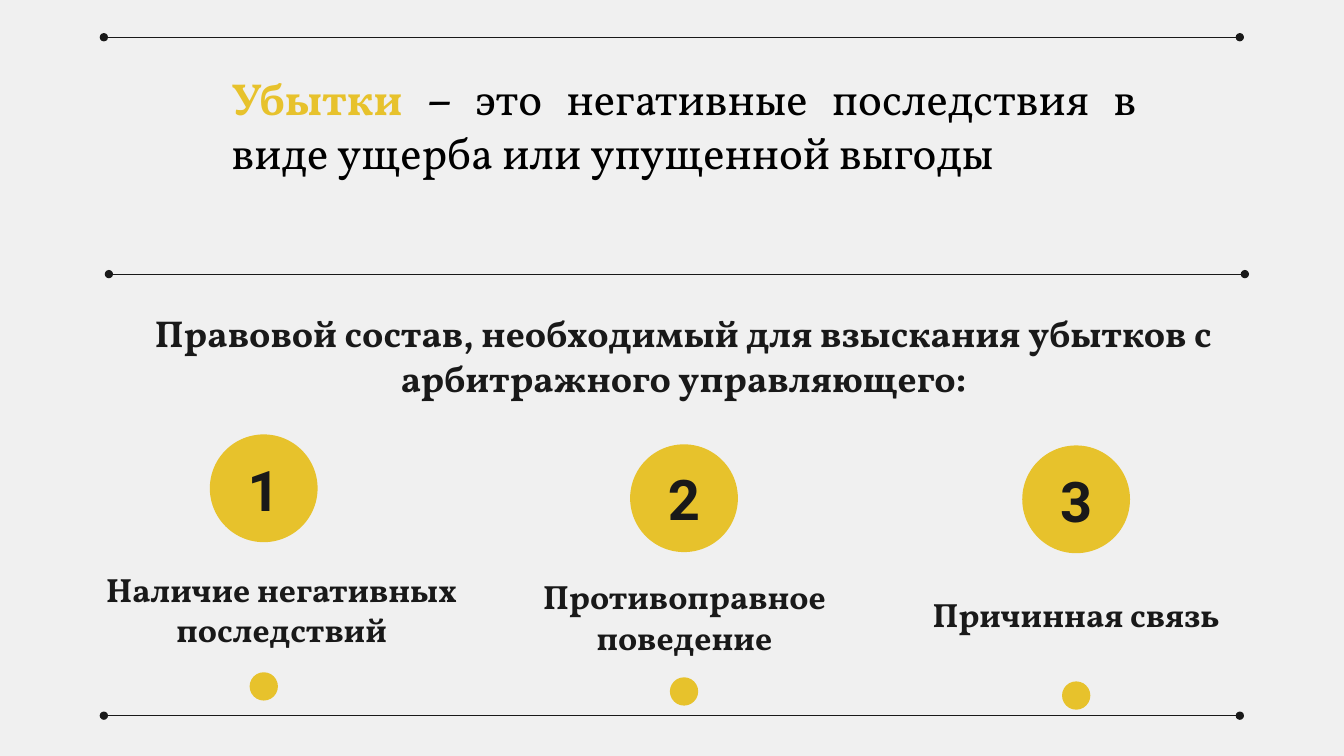
from pptx import Presentation
from pptx.dml.color import RGBColor
from pptx.enum.shapes import MSO_CONNECTOR, MSO_SHAPE
from pptx.enum.text import MSO_ANCHOR, PP_ALIGN
from pptx.oxml.ns import qn
from pptx.util import Pt
from lxml.etree import SubElement

GOLD, INK, BLACK, PAPER = "E7C22C", "191919", "000000", "F0F0F0"
SERIF, SANS = "Vollkorn", "Roboto"


def paint(color, code):
    color.rgb = RGBColor.from_string(code)


def write(left, top, width, height, runs, size, font=SERIF,
          anchor=MSO_ANCHOR.TOP, align=PP_ALIGN.CENTER, inset=9.6):
    """Add a text box; runs holds (text, colour, bold) triples."""
    box = slide.shapes.add_textbox(Pt(left), Pt(top), Pt(width), Pt(height))
    frame = box.text_frame
    frame.word_wrap = True
    frame.vertical_anchor = anchor
    if inset:
        frame.margin_left = frame.margin_right = Pt(inset)
        frame.margin_top = frame.margin_bottom = Pt(inset)
    para = frame.paragraphs[0]
    para.alignment = align
    for text, code, bold in runs:
        run = para.add_run()
        run.text = text
        run.font.name = font
        run.font.size = Pt(size)
        run.font.bold = bold
        paint(run.font.color, code)


deck = Presentation()
deck.slide_width, deck.slide_height = Pt(960), Pt(540)
slide = deck.slides.add_slide(deck.slide_layouts[6])
slide.background.fill.solid()
paint(slide.background.fill.fore_color, PAPER)

# Rules with round ends
for left, top in [(74.2, 26.6), (77.8, 195.8), (74.2, 511.2)]:
    rule = slide.shapes.add_connector(
        MSO_CONNECTOR.STRAIGHT, Pt(left), Pt(top), Pt(left + 811.4), Pt(top))
    rule.line.width = Pt(0.75)
    paint(rule.line.color, INK)
    stroke = rule.line._get_or_add_ln()
    for end in ("a:headEnd", "a:tailEnd"):
        SubElement(stroke, qn(end), type="oval")
    SubElement(rule._element.spPr, qn("a:effectLst"))

# Definition and heading
write(158.4, 46.8, 661, 85, [
    ("Убытки", GOLD, True),
    (" – ", BLACK, True),
    ("это негативные последствия в виде ущерба или упущенной выгоды",
     BLACK, False),
], 32, align=PP_ALIGN.JUSTIFY, inset=None)
write(84.2, 211.7, 808.6, 60.5, [
    ("Правовой состав, необходимый для взыскания убытков с "
     "арбитражного управляющего:", INK, True),
], 26.7)

# Numbered elements: centre, tops of disc, number, label and dot,
# then the label's left, width and text
steps = [
    (188.4, 310.3, 326.2, 418.3, 480.2, 12.2, 378,
     "Наличие негативных последствий"),
    (488.6, 317.4, 332.6, 423.4, 483.8, 341.3, 295.2,
     "Противоправное поведение"),
    (768.7, 318.2, 334.1, 407.5, 486.7, 648, 241.2,
     "Причинная связь"),
]
for count, step in enumerate(steps, 1):
    mid, disc, digit, label, dot, left, width, text = step
    for top, size in [(disc, 77), (dot, 20.2)]:
        oval = slide.shapes.add_shape(
            MSO_SHAPE.OVAL, Pt(mid - size / 2), Pt(top), Pt(size), Pt(size))
        oval.shadow.inherit = False
        oval.fill.solid()
        paint(oval.fill.fore_color, GOLD)
        oval.line.fill.background()
    write(mid - 38.5, digit, 77, 46.8, [(str(count), INK, True)], 40,
          SANS, MSO_ANCHOR.MIDDLE)
    write(left, label, width, 55.4, [(text, INK, True)], 24,
          anchor=MSO_ANCHOR.BOTTOM)

deck.save("out.pptx")
